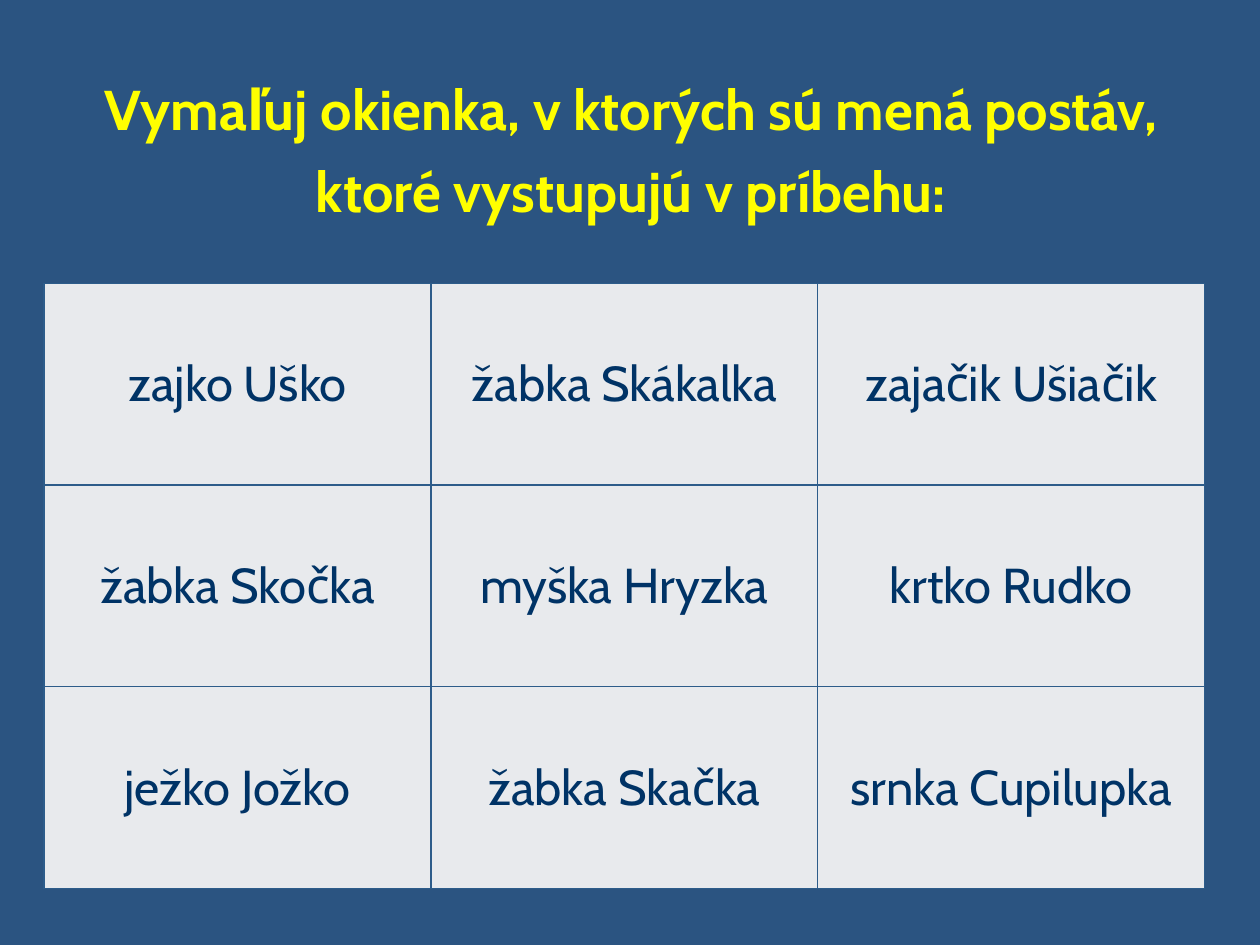
from dataclasses import dataclass

from lxml.etree import SubElement
from pptx import Presentation
from pptx.dml.color import RGBColor
from pptx.enum.text import MSO_ANCHOR, MSO_AUTO_SIZE, PP_ALIGN
from pptx.oxml.ns import qn
from pptx.util import Inches, Pt


@dataclass(frozen=True)
class Theme:
    """Colours and type sizes of the slide."""
    font: str = "Cabin"
    background: str = "2B5481"
    heading: str = "FFFF00"
    window: str = "E8EAED"
    name: str = "003366"
    border: str = "2D5C8A"
    heading_size: int = 32
    heading_leading: int = 47
    name_size: int = 28
    border_width: int = 1


THEME = Theme()
HEADING = "Vymaľuj okienka, v ktorých sú mená postáv, ktoré vystupujú v príbehu:"
CHARACTERS = [
    ["zajko Uško", "žabka Skákalka", "zajačik Ušiačik"],
    ["žabka Skočka", "myška Hryzka", "krtko Rudko"],
    ["ježko Jožko", "žabka Skačka", "srnka Cupilupka"],
]
WINDOW_WIDTH, WINDOW_HEIGHT = Inches(3.07), Inches(1.6)


def write_centred(frame, wording, size, colour, bold=False):
    """Write one centred run into the first paragraph of a frame."""
    paragraph = frame.paragraphs[0]
    paragraph.alignment = PP_ALIGN.CENTER
    paragraph.space_before = Pt(0)
    run = paragraph.add_run()
    run.text = wording
    run.font.name = THEME.font
    run.font.size = Pt(size)
    run.font.bold = bold
    run.font.color.rgb = RGBColor.from_string(colour)
    return paragraph


def add_heading(slide):
    """Place the instruction in the title placeholder."""
    heading = slide.shapes.title
    heading.left, heading.top = Inches(0.51), Inches(0.47)
    heading.width, heading.height = Inches(9), Inches(1.31)
    frame = heading.text_frame
    frame.word_wrap = True
    frame.auto_size = MSO_AUTO_SIZE.NONE
    frame.vertical_anchor = MSO_ANCHOR.MIDDLE
    frame.margin_top = frame.margin_bottom = 0
    instruction = write_centred(
        frame, HEADING, THEME.heading_size, THEME.heading, bold=True)
    instruction.line_spacing = Pt(THEME.heading_leading)


def outline_window(window):
    """Draw the same border on all four sides of a cell."""
    properties = window._tc.get_or_add_tcPr()
    for position, side in enumerate(("a:lnL", "a:lnR", "a:lnT", "a:lnB")):
        border = SubElement(properties, qn(side), w=str(Pt(THEME.border_width)))
        fill = SubElement(border, qn("a:solidFill"))
        SubElement(fill, qn("a:srgbClr"), val=THEME.border)
        properties.insert(position, border)


def add_windows(slide):
    """Lay out the character names as a grid of equal windows."""
    rows, columns = len(CHARACTERS), len(CHARACTERS[0])
    grid = slide.shapes.add_table(
        rows, columns, Inches(0.35), Inches(2.25),
        columns * WINDOW_WIDTH, rows * WINDOW_HEIGHT).table
    grid.first_row = grid.horz_banding = False
    for row, names in enumerate(CHARACTERS):
        for column, name in enumerate(names):
            window = grid.cell(row, column)
            window.vertical_anchor = MSO_ANCHOR.MIDDLE
            window.fill.solid()
            window.fill.fore_color.rgb = RGBColor.from_string(THEME.window)
            outline_window(window)
            write_centred(window.text_frame, name, THEME.name_size, THEME.name)


def main():
    """Build and save the colouring task."""
    deck = Presentation()
    deck.slide_width, deck.slide_height = Inches(10), Inches(7.5)
    slide = deck.slides.add_slide(deck.slide_layouts[5])
    slide.background.fill.solid()
    slide.background.fill.fore_color.rgb = RGBColor.from_string(THEME.background)
    add_heading(slide)
    add_windows(slide)
    deck.save("out.pptx")


if __name__ == "__main__":
    main()
